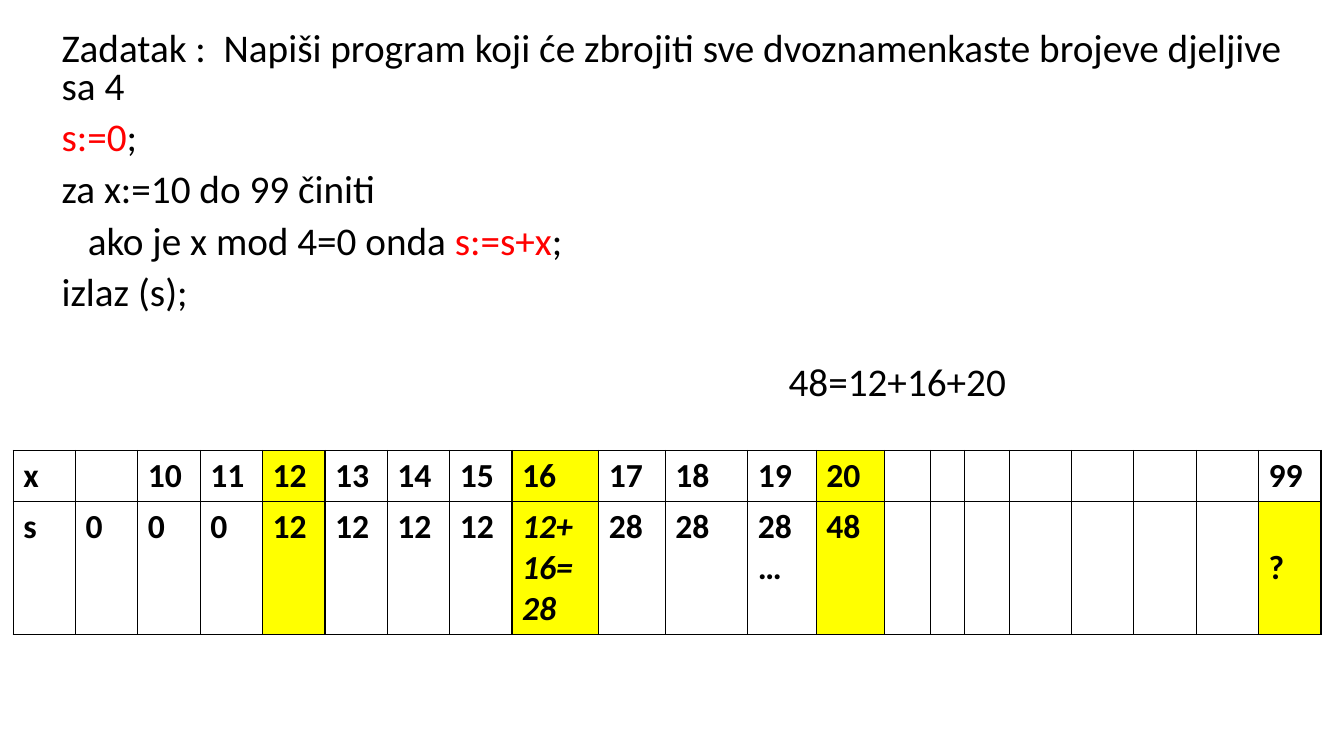
from dataclasses import dataclass

from lxml.etree import SubElement
from pptx import Presentation
from pptx.dml.color import RGBColor
from pptx.enum.text import MSO_ANCHOR, MSO_AUTO_SIZE
from pptx.oxml.ns import qn
from pptx.util import Inches, Pt


@dataclass(frozen=True)
class Theme:
    font: str = "Calibri"
    ink: str = "000000"
    red: str = "FF0000"
    paper: str = "FFFFFF"
    mark: str = "FFFF00"
    body: int = 28
    cell: int = 24
    rule: int = 1


THEME = Theme()


def write(para, text, size=THEME.body, color=THEME.ink, bold=False, italic=False):
    run = para.add_run()
    run.text = text
    font = run.font
    font.name, font.size = THEME.font, Pt(size)
    font.bold, font.italic = bold, italic
    font.color.rgb = RGBColor.from_string(color)


class Deck:
    def __init__(self, theme):
        self.theme = theme
        self.file = Presentation()
        self.file.slide_width = Inches(13.33)
        self.file.slide_height = Inches(7.5)
        self.slide = self.file.slides.add_slide(self.file.slide_layouts[1])
        title = self.slide.shapes.title.element
        title.getparent().remove(title)

    def wide(self, share):
        return round(self.file.slide_width * share / 100)

    def high(self, share):
        return round(self.file.slide_height * share / 100)

    def box(self, left, top, width, height):
        return self.wide(left), self.high(top), self.wide(width), self.high(height)

    def body(self, place, lines):
        shape = self.slide.placeholders[1]
        shape.left, shape.top, shape.width, shape.height = self.box(*place)
        frame = shape.text_frame
        frame.word_wrap = True
        frame.auto_size = MSO_AUTO_SIZE.NONE
        for order, (indent, before, parts) in enumerate(lines):
            para = frame.add_paragraph() if order else frame.paragraphs[0]
            para.line_spacing = 0.8
            para.space_before = Pt(before)
            props = para._p.get_or_add_pPr()
            props.set("marL", str(self.wide(indent)))
            props.set("indent", "0")
            SubElement(props, qn("a:buNone"))
            for text, color in parts:
                write(para, text, color=color)

    def edge(self, cell):
        props = cell._tc.get_or_add_tcPr()
        for side in ("lnL", "lnR", "lnT", "lnB"):
            line = SubElement(props, qn(f"a:{side}"), w=str(Pt(self.theme.rule)))
            fill = SubElement(line, qn("a:solidFill"))
            SubElement(fill, qn("a:srgbClr"), val=self.theme.ink)

    def table(self, left, top, widths, heights, rows, marks, slant, middle):
        place = self.box(left, top, sum(widths), sum(heights))
        grid = self.slide.shapes.add_table(len(rows), len(widths), *place).table
        grid.first_row = grid.horz_banding = False
        for col, width in zip(grid.columns, widths):
            col.width = self.wide(width)
        for row, height in zip(grid.rows, heights):
            row.height = self.high(height)
        for r, row in enumerate(rows):
            for c, text in enumerate(row):
                cell = grid.cell(r, c)
                self.edge(cell)
                cell.fill.solid()
                tint = self.theme.mark if (r, c) in marks else self.theme.paper
                cell.fill.fore_color.rgb = RGBColor.from_string(tint)
                if (r, c) in middle:
                    cell.vertical_anchor = MSO_ANCHOR.MIDDLE
                if text:
                    write(cell.text_frame.paragraphs[0], text, size=self.theme.cell,
                          bold=True, italic=(r, c) in slant)

    def save(self):
        self.file.save("out.pptx")


def main():
    deck = Deck(THEME)
    ink, red = THEME.ink, THEME.red
    task = "Zadatak :  Napiši program koji će zbrojiti sve dvoznamenkaste brojeve djeljive sa 4"
    deck.body((3.83, 3.6, 94.45, 51.47), [
        (0, 10, [(task, ink)]),
        (0, 10, [("s:=0", red), (";", ink)]),
        (0, 10, [("za x:=10 do 99 činiti", ink)]),
        (1.95, 10, [("ako je x mod 4=0 onda ", ink), ("s:=s+x", red), (";", ink)]),
        (0, 10, [("izlaz (s);", ink)]),
        (54.1, 37, [("48=12+16+20", ink)]),
    ])

    unit = 4.64
    widths = [unit] * 8 + [6.45, 4.95, 6.15, 5.1, 5.1, 3.4, 2.55, 3.3] + [unit] * 5
    gap = [""] * 7
    count = ["x", "", *map(str, range(10, 21)), *gap, "99"]
    total = ["s", *["0"] * 3, *["12"] * 4, "12+16=28", "28", "28", "28…", "48", *gap, "?"]
    last = (1, len(widths) - 1)
    marks = {(r, c) for r in range(2) for c in (4, 8, 12)} | {last}
    deck.table(0.98, 59.6, widths, [6.75, 17.5], [count, total],
               marks, slant={(1, 8)}, middle={last})
    deck.save()


if __name__ == "__main__":
    main()
